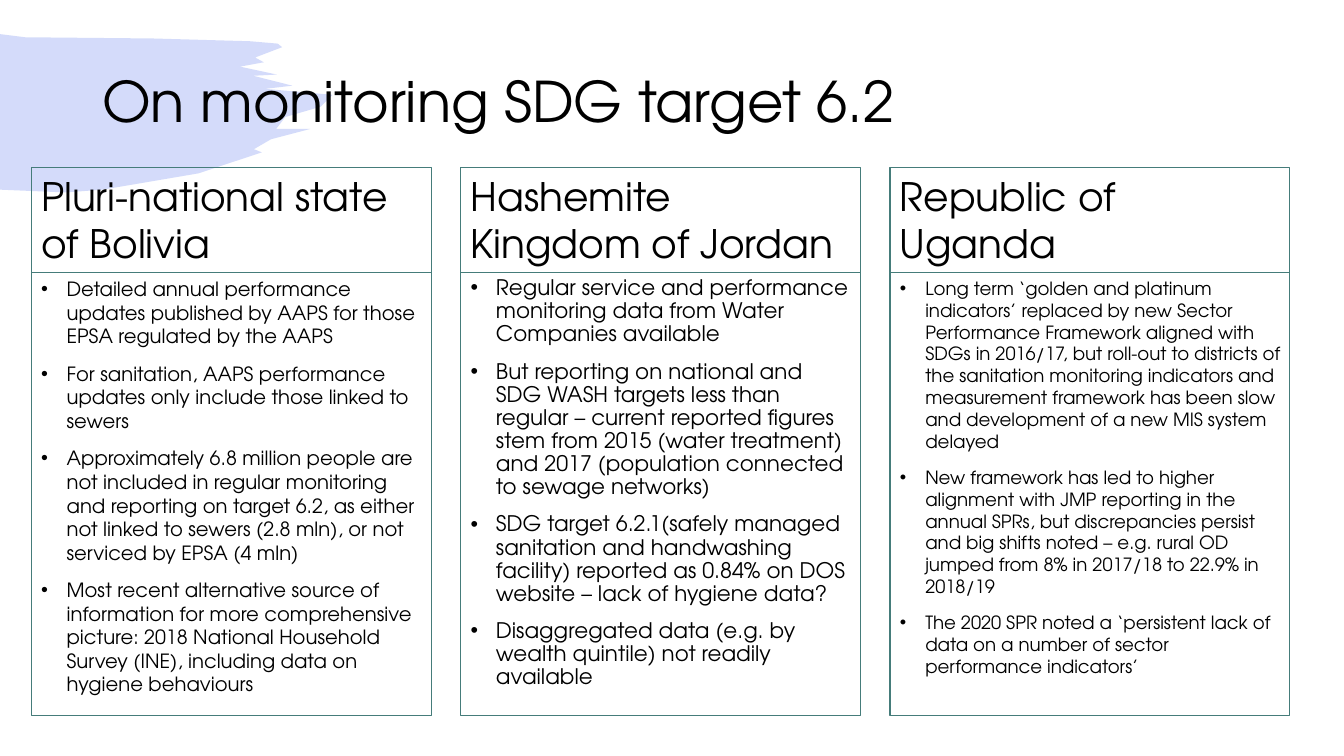
from dataclasses import dataclass

from lxml import etree
from pptx import Presentation
from pptx.dml.color import RGBColor
from pptx.enum.shapes import MSO_SHAPE
from pptx.enum.text import MSO_ANCHOR, PP_ALIGN
from pptx.oxml.ns import qn
from pptx.util import Cm, Pt

RECTANGLE = MSO_SHAPE.RECTANGLE
TOP = MSO_ANCHOR.TOP
MIDDLE = MSO_ANCHOR.MIDDLE
LEFT = PP_ALIGN.LEFT


@dataclass(frozen=True)
class Theme:
    font: str = "TeX Gyre Adventor"
    text: RGBColor = RGBColor.from_string("000000")
    border: RGBColor = RGBColor.from_string("457C7A")
    brush: RGBColor = RGBColor.from_string("294FE7")
    brush_opacity: int = 20
    title_size: float = 40
    heading_size: float = 28
    border_width: float = 0.75
    bullet_gap: float = 10


THEME = Theme()

# Column grid, in centimetres
COLUMN_LEFT, COLUMN_STEP, COLUMN_WIDTH = 0.79, 10.82, 10.08
HEADING_TOP, HEADING_HEIGHT = 4.22, 2.64
BODY_TOP, BODY_HEIGHT = HEADING_TOP + HEADING_HEIGHT, 11.18

# Heading, bullet size, line spacing, bullets
COLUMNS = [
    ("Pluri-national state of Bolivia", 14, 1.0, [
        "Detailed annual performance updates published by AAPS for those EPSA "
        "regulated by the AAPS",
        "For sanitation, AAPS performance updates only include those linked to sewers",
        "Approximately 6.8 million people are not included in regular monitoring and "
        "reporting on target 6.2, as either not linked to sewers (2.8 mln), or not "
        "serviced by EPSA (4 mln)",
        "Most recent alternative source of information for more comprehensive picture: "
        "2018 National Household Survey (INE), including data on hygiene behaviours",
    ]),
    ("Hashemite Kingdom of Jordan", 15.3, 0.9, [
        "Regular service and performance monitoring data from Water Companies available",
        "But reporting on national and SDG WASH targets less than regular – current "
        "reported figures stem from 2015 (water treatment) and 2017 (population "
        "connected to sewage networks)",
        "SDG target 6.2.1(safely managed sanitation and handwashing facility) reported "
        "as 0.84% on DOS website – lack of hygiene data?",
        "Disaggregated data (e.g. by wealth quintile) not readily available",
    ]),
    ("Republic of Uganda", 13, 1.0, [
        "Long term ‘golden and platinum indicators’ replaced by new Sector Performance "
        "Framework aligned with SDGs in 2016/17, but roll-out to districts of the "
        "sanitation monitoring indicators and measurement framework has been slow and "
        "development of a new MIS system delayed",
        "New framework has led to higher alignment with JMP reporting in the annual "
        "SPRs, but discrepancies persist and big shifts noted – e.g. rural OD jumped "
        "from 8% in 2017/18 to 22.9% in 2018/19",
        "The 2020 SPR noted a ‘persistent lack of data on a number of sector "
        "performance indicators’",
    ]),
]

# Brush stroke outline in centimetres: top edge, ragged end, bottom edge
BRUSH_OUTLINE = [
    (0, 0.86), (0.64, 0.94), (3.84, 0.97), (6.3, 1.04), (7, 1.1),
    (7.11, 1.19), (6.43, 1.45), (6.65, 1.57), (6.05, 1.68), (6.98, 1.88),
    (6.38, 1.91), (7.37, 2.16), (6.68, 2.24), (8.38, 2.39), (8.08, 2.69),
    (7.19, 2.95), (6.96, 3.25), (7.82, 3.25), (6.83, 3.51), (6.4, 3.76),
    (6.6, 3.84), (5, 4.37), (2.59, 4.78), (1.65, 4.85), (0, 4.78),
]


def add_brush(slide):
    points = [(Cm(x), Cm(y)) for x, y in BRUSH_OUTLINE]
    builder = slide.shapes.build_freeform(*points[0])
    builder.add_line_segments(points[1:], close=True)
    shape = builder.convert_to_shape()
    shape.shadow.inherit = False
    shape.line.fill.background()
    shape.fill.solid()
    shape.fill.fore_color.rgb = THEME.brush
    color = shape._element.spPr.find(qn("a:solidFill"))[0]
    etree.SubElement(color, qn("a:alpha"), val=str(THEME.brush_opacity * 1000))


def write_paragraphs(shape, texts, size, spacing=1.0, anchor=TOP):
    frame = shape.text_frame
    frame.word_wrap = True
    frame.vertical_anchor = anchor
    frame.text = "\n".join(texts)
    for paragraph in frame.paragraphs:
        paragraph.alignment = LEFT
        paragraph.line_spacing = spacing
        font = paragraph.runs[0].font
        font.name = THEME.font
        font.size = Pt(size)
        font.color.rgb = THEME.text


def add_bullets(shape):
    indent = Cm(0.64)
    for paragraph in shape.text_frame.paragraphs:
        paragraph.space_before = Pt(THEME.bullet_gap)
        properties = paragraph._p.get_or_add_pPr()
        properties.set("marL", str(indent))
        properties.set("indent", str(-indent))
        etree.SubElement(properties, qn("a:buFont"), typeface="Arial")
        etree.SubElement(properties, qn("a:buChar"), char="•")


def add_title(slide, text):
    box = slide.shapes.add_textbox(Cm(2.33), Cm(0.79), Cm(29.21), Cm(3.68))
    write_paragraphs(box, [text], THEME.title_size, 0.9, MIDDLE)


def add_panel(slide, left, top, height):
    shape = slide.shapes.add_shape(
        RECTANGLE, Cm(left), Cm(top), Cm(COLUMN_WIDTH), Cm(height))
    shape.shadow.inherit = False
    shape.fill.background()
    shape.line.color.rgb = THEME.border
    shape.line.width = Pt(THEME.border_width)
    return shape


def add_column(slide, left, heading, size, spacing, bullets):
    body = add_panel(slide, left, BODY_TOP, BODY_HEIGHT)
    write_paragraphs(body, bullets, size, spacing)
    add_bullets(body)
    header = add_panel(slide, left, HEADING_TOP, HEADING_HEIGHT)
    write_paragraphs(header, [heading], THEME.heading_size)


def main():
    presentation = Presentation()
    presentation.slide_width, presentation.slide_height = Cm(33.87), Cm(19.05)
    slide = presentation.slides.add_slide(presentation.slide_layouts[6])

    # Brush stroke and title
    add_brush(slide)
    add_title(slide, "On monitoring SDG target 6.2")

    # One column per country
    for index, column in enumerate(COLUMNS):
        add_column(slide, COLUMN_LEFT + index * COLUMN_STEP, *column)

    presentation.save("out.pptx")


if __name__ == "__main__":
    main()
